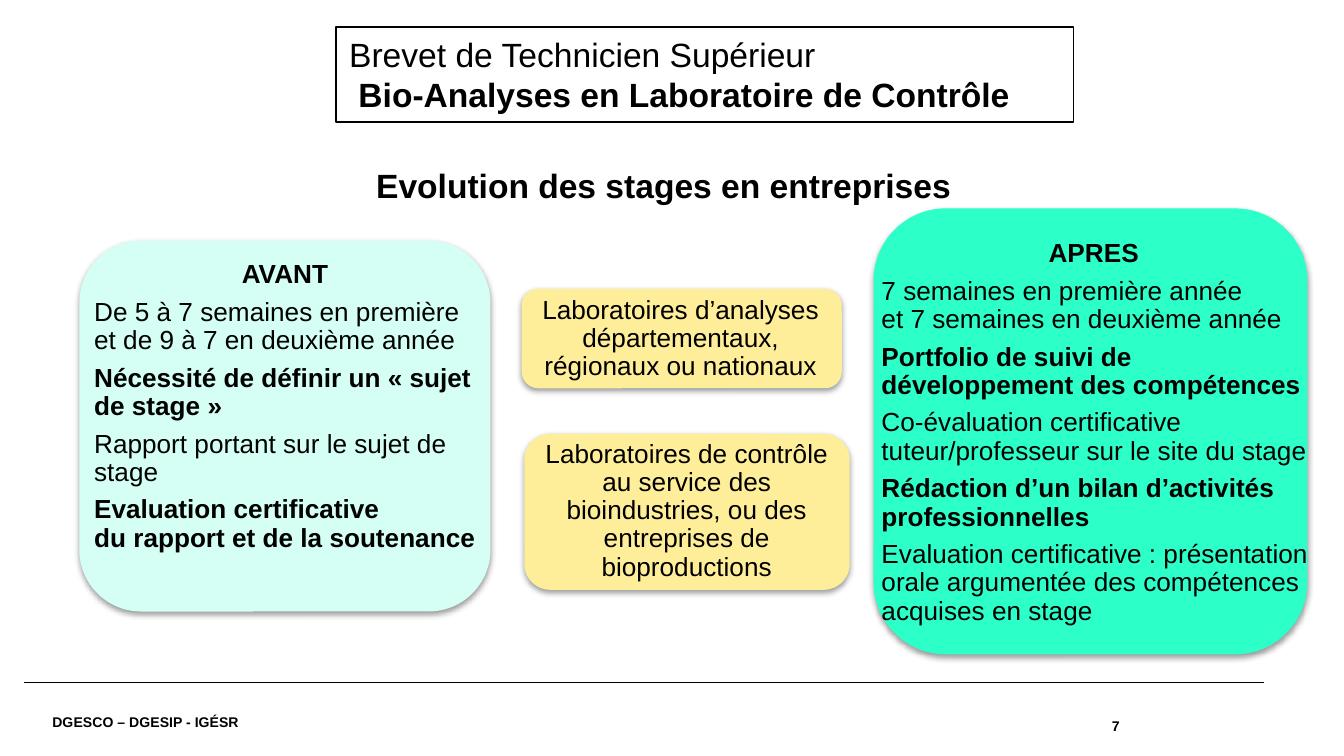
from dataclasses import dataclass

from lxml.etree import SubElement
from pptx import Presentation
from pptx.dml.color import RGBColor
from pptx.enum.shapes import MSO_CONNECTOR as CONN, MSO_SHAPE as SHAPE
from pptx.enum.text import MSO_ANCHOR as ANCHOR, PP_ALIGN as ALIGN
from pptx.oxml.ns import qn
from pptx.util import Cm, Pt


@dataclass(frozen=True)
class Theme:
    font: str = "Arial"
    ink: RGBColor = RGBColor(0x00, 0x00, 0x00)
    lab: RGBColor = RGBColor(0xFF, 0xEE, 0x99)
    before: RGBColor = RGBColor(0xD5, 0xFF, 0xF4)
    after: RGBColor = RGBColor(0x2C, 0xFF, 0xC8)
    title: Pt = Pt(18)
    body: Pt = Pt(14)
    footer: Pt = Pt(7.5)


T = Theme()


def write(sp, paras, size, inset=(0, 0), anchor=ANCHOR.MIDDLE, **para_format):
    """Fill sp with (text, bold, alignment) paragraphs; \\v breaks a line."""
    tf = sp.text_frame
    dx, dy = (Cm(v) for v in inset)
    frame = dict(word_wrap=True, vertical_anchor=anchor, margin_left=dx,
                 margin_right=dx, margin_top=dy, margin_bottom=dy)
    for name, value in frame.items():
        setattr(tf, name, value)
    for i, (text, bold, align) in enumerate(paras):
        p = tf.add_paragraph() if i else tf.paragraphs[0]
        p.text = text
        for name, value in dict(para_format, alignment=align).items():
            setattr(p, name, value)
        for r in p.runs:
            for name, value in dict(name=T.font, size=size, bold=bold).items():
                setattr(r.font, name, value)
            r.font.color.rgb = T.ink


def drop_shadow(sp):
    effects = SubElement(sp._element.spPr, qn("a:effectLst"))
    shadow = SubElement(effects, qn("a:outerShdw"), blurRad=str(Pt(3.1)),
                        dist=str(Pt(1.6)), dir="5400000", rotWithShape="0")
    color = SubElement(shadow, qn("a:srgbClr"), val=str(T.ink))
    SubElement(color, qn("a:alpha"), val="38000")


prs = Presentation()
prs.slide_width, prs.slide_height = Cm(25.4), Cm(14.29)
s = prs.slides.add_slide(prs.slide_layouts[6])

# Footer
rule = s.shapes.add_connector(CONN.STRAIGHT, Cm(0.46), Cm(12.9), Cm(23.88), Cm(12.9))
rule.line.color.rgb = T.ink
rule.line.width = Pt(0.8)
SubElement(rule._element.spPr, qn("a:effectLst"))

for text, align, box in [
    ("DGESCO – DGESIP - IGÉSR", ALIGN.LEFT, (0.99, 13.16, 16.41, 0.99)),
    ("7", ALIGN.RIGHT, (17.4, 13.23, 3.76, 0.99)),
]:
    write(s.shapes.add_textbox(*map(Cm, box)), [(text, True, align)], T.footer)

# Title and heading
title = s.shapes.add_shape(SHAPE.RECTANGLE, Cm(6.35), Cm(0.51), Cm(13.94), Cm(1.8))
title.shadow.inherit = False
title.fill.background()
title.line.color.rgb = T.ink
title.line.width = Pt(0.75)
write(title, [("Brevet de Technicien Supérieur", False, ALIGN.LEFT),
              (" Bio-Analyses en Laboratoire de Contrôle", True, ALIGN.LEFT)],
      T.title, inset=(0.25, 0.13), anchor=ANCHOR.TOP)

heading = s.shapes.add_textbox(Cm(7.11), Cm(3.2), Cm(18.2), Cm(0.91))
write(heading, [("Evolution des stages en entreprises", True, ALIGN.LEFT)],
      T.title, anchor=ANCHOR.TOP, line_spacing=0.9)

# Cards: fill, card box, text box, paragraphs
cards = [
    (T.lab, (9.86, 5.46, 6.05, 1.88), (9.93, 5.56, 5.87, 1.7), [
        ("Laboratoires d’analyses départementaux, régionaux ou nationaux",
         False, ALIGN.CENTER),
    ]),
    (T.lab, (9.91, 8.2, 6.15, 2.95), (10.01, 8.33, 5.94, 2.67), [
        ("Laboratoires de contrôle au service des bioindustries, "
         "ou des entreprises de bioproductions", False, ALIGN.CENTER),
    ]),
    (T.before, (1.5, 4.55, 7.77, 7.01), (1.63, 5.03, 7.65, 5.33), [
        ("AVANT ", True, ALIGN.CENTER),
        ("De 5 à 7 semaines en première et de 9 à 7 en deuxième année",
         False, ALIGN.LEFT),
        ("Nécessité de définir un « sujet de stage »", True, ALIGN.LEFT),
        ("Rapport portant sur le sujet de stage", False, ALIGN.LEFT),
        ("Evaluation certificative \vdu rapport et de la soutenance",
         True, ALIGN.LEFT),
    ]),
    (T.after, (16.51, 3.94, 8.2, 8.43), (16.51, 4.39, 8.46, 7.59), [
        ("APRES ", True, ALIGN.CENTER),
        ("7 semaines en première année\vet 7 semaines en deuxième année",
         False, ALIGN.LEFT),
        ("Portfolio de suivi de développement des compétences", True, ALIGN.LEFT),
        ("Co-évaluation certificative tuteur/professeur sur le site du stage",
         False, ALIGN.LEFT),
        ("Rédaction d’un bilan d’activités professionnelles", True, ALIGN.LEFT),
        ("Evaluation certificative : présentation orale argumentée "
         "des compétences acquises en stage", False, ALIGN.LEFT),
    ]),
]
for fill, card_box, text_box, paras in cards:
    card = s.shapes.add_shape(SHAPE.ROUNDED_RECTANGLE, *map(Cm, card_box))
    card.fill.solid()
    card.fill.fore_color.rgb = fill
    card.line.fill.background()
    drop_shadow(card)
    write(s.shapes.add_textbox(*map(Cm, text_box)), paras, T.body,
          inset=(0.15, 0.15), line_spacing=0.9, space_after=Pt(5))

prs.save("out.pptx")
